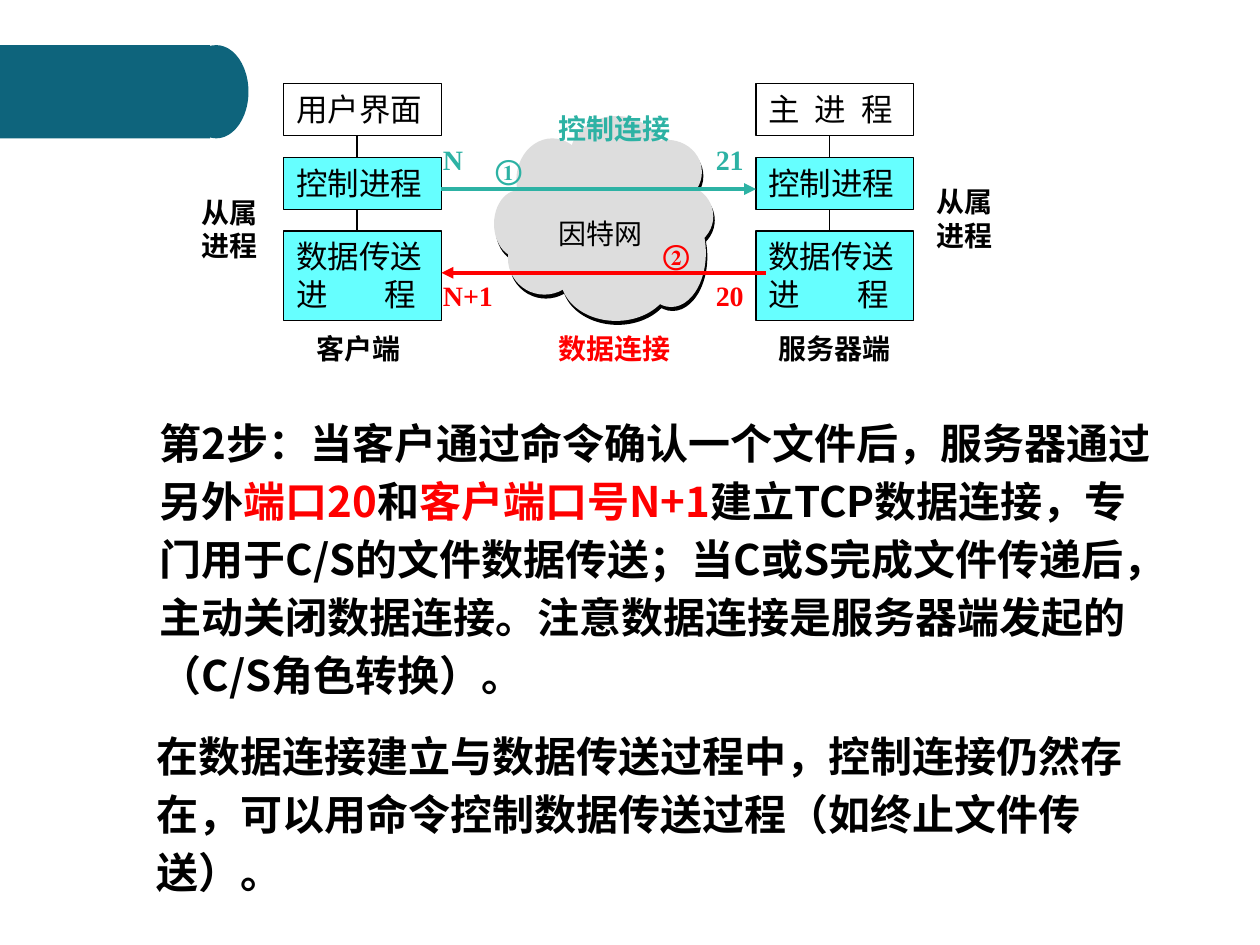
from typing import NamedTuple

from lxml import etree
from pptx import Presentation
from pptx.dml.color import RGBColor
from pptx.enum import shapes, text
from pptx.oxml import ns
from pptx.util import Cm, Pt

SERIF, SANS = "Times New Roman", "Noto Sans CJK SC"
BLACK, WHITE, RED, TEAL = "000000", "FFFFFF", "FF0000", "2DB2A4"
CYAN, GREY, BANNER = "66FFFF", "DDDDDD", "0E647C"
CLIENT_X, SERVER_X, BOX_WIDTH = 5.72, 15.24, 3.18
LABEL_HEIGHT = 0.94


class Frame(NamedTuple):
    """Left, top, width and height in centimetres."""
    left: float
    top: float
    width: float
    height: float


class Run(NamedTuple):
    text: str
    colour: str = BLACK


class Box(NamedTuple):
    frame: Frame
    text: str
    fill: str = CYAN
    tabs: tuple = ()


class Label(NamedTuple):
    text: str
    frame: Frame
    colour: str = BLACK
    bold: bool = True


class Line(NamedTuple):
    start: tuple
    end: tuple
    colour: str = BLACK
    width: float = 0.75
    arrow: str = ""


def rgb(colour: str) -> RGBColor:
    return RGBColor.from_string(colour)


def lengths(values) -> list:
    return [Cm(value) for value in values]


def add_preset(parent, kind, frame: Frame, fill: str, outline: str = ""):
    shape = parent.add_shape(kind, *lengths(frame))
    shape.shadow.inherit = False
    shape.fill.solid()
    shape.fill.fore_color.rgb = rgb(fill)
    if outline:
        shape.line.color.rgb = rgb(outline)
        shape.line.width = Pt(0.75)
    else:
        shape.line.fill.background()
    return shape


def add_tab_stops(paragraph, positions) -> None:
    properties = paragraph._p.get_or_add_pPr()
    tab_list = etree.SubElement(properties, ns.qn("a:tabLst"))
    for position in positions:
        etree.SubElement(tab_list, ns.qn("a:tab"), pos=str(Cm(position)), algn="l")


def write_runs(paragraph, runs, size: float, name: str, bold: bool) -> None:
    paragraph.alignment = text.PP_ALIGN.LEFT
    for item in runs:
        run = paragraph.add_run()
        run.text = item.text
        for key, value in {"size": Pt(size), "bold": bold, "name": name}.items():
            setattr(run.font, key, value)
        run.font.color.rgb = rgb(item.colour)
        if name == SANS:
            etree.SubElement(run._r.rPr, ns.qn("a:ea"), typeface=name)


def add_text(slide, frame: Frame, runs, size=16, name=SERIF, bold=True):
    shape = slide.shapes.add_textbox(*lengths(frame))
    shape.text_frame.word_wrap = True
    write_runs(shape.text_frame.paragraphs[0], runs, size, name, bold)
    return shape


def add_body(slide, frame: Frame, runs) -> None:
    text_frame = add_text(slide, frame, runs, 24, SANS).text_frame
    text_frame.vertical_anchor = text.MSO_ANCHOR.MIDDLE
    text_frame.paragraphs[0].line_spacing = 1.15


def add_box(slide, box: Box) -> None:
    shape = add_preset(slide.shapes, shapes.MSO_SHAPE.RECTANGLE, box.frame, box.fill, BLACK)
    shape.text_frame.word_wrap = True
    shape.text_frame.vertical_anchor = text.MSO_ANCHOR.TOP
    paragraph = shape.text_frame.paragraphs[0]
    if box.tabs:
        add_tab_stops(paragraph, box.tabs)
    write_runs(paragraph, [Run(box.text)], 18, SERIF, False)


def add_line(slide, line: Line) -> None:
    connector = slide.shapes.add_connector(
        shapes.MSO_CONNECTOR.STRAIGHT, *lengths(line.start + line.end))
    connector.line.color.rgb = rgb(line.colour)
    connector.line.width = Pt(line.width)
    if line.arrow:
        etree.SubElement(connector.line._get_or_add_ln(), ns.qn(line.arrow), type="triangle")
    etree.SubElement(connector._element.spPr, ns.qn("a:effectLst"))


def add_cloud(slide, puffs) -> None:
    """Draw the puffs twice: a dark offset layer under a grey one."""
    group = slide.shapes.add_group_shape()
    for fill, dx, dy in ((BLACK, 0.03, 0.08), (GREY, 0, 0)):
        for puff in puffs:
            frame = puff._replace(left=puff.left + dx, top=puff.top + dy)
            add_preset(group.shapes, shapes.MSO_SHAPE.OVAL, frame, fill)


def add_banner(slide) -> None:
    group = slide.shapes.add_group_shape()
    add_preset(group.shapes, shapes.MSO_SHAPE.RECTANGLE, Frame(0, 0.91, 4.24, 1.88), BANNER)
    add_preset(group.shapes, shapes.MSO_SHAPE.OVAL, Frame(3.71, 0.91, 1.3, 1.88), BANNER)


def process_boxes(left: float, top_text: str, top_tabs: tuple = ()) -> list:
    return [
        Box(Frame(left, 1.69, BOX_WIDTH, 1.04), top_text, WHITE, top_tabs),
        Box(Frame(left, 3.18, BOX_WIDTH, 1.04), "控制进程"),
        Box(Frame(left, 4.66, BOX_WIDTH, 1.8), "数据传送进\t程", CYAN, (1.79,)),
    ]


PUFFS = [
    Frame(11.48, 2.34, 1.9, 1.68), Frame(10.41, 2.79, 1.45, 1.68),
    Frame(9.96, 3.84, 0.97, 1.35), Frame(10.24, 4.47, 1.47, 1.47),
    Frame(11.3, 4.72, 2.24, 1.75), Frame(12.75, 2.82, 1.4, 1.3),
    Frame(12.98, 3.71, 1.4, 1.3), Frame(12.83, 4.01, 1.4, 2.18),
    Frame(10.74, 3.33, 2.87, 2.18),
]
BOXES = (process_boxes(CLIENT_X, "用户界面")
         + process_boxes(SERVER_X, "主\t进\t程", (0.94, 1.87)))
LINES = [
    Line((x + 1.48, top), (x + 1.48, bottom))
    for x in (CLIENT_X, SERVER_X) for top, bottom in ((2.74, 3.18), (4.23, 4.66))
] + [
    Line((CLIENT_X + BOX_WIDTH, 3.81), (SERVER_X, 3.81), TEAL, 2.25, "a:tailEnd"),
    Line((CLIENT_X + BOX_WIDTH, 5.5), (15.45, 5.5), RED, 2.25, "a:headEnd"),
]
LABELS = [
    Label("因特网", Frame(11.01, 4.24, 2.34, LABEL_HEIGHT), bold=False),
    Label("客户端", Frame(6.14, 6.56, 2.54, LABEL_HEIGHT)),
    Label("服务器端", Frame(15.45, 6.56, 2.96, LABEL_HEIGHT)),
    Label("从属进程", Frame(3.81, 3.81, 1.69, 1.62)),
    Label("从属进程", Frame(18.63, 3.6, 1.69, 1.62)),
    Label("控制连接", Frame(11.01, 2.12, 2.96, LABEL_HEIGHT), TEAL),
    Label("数据连接", Frame(11.01, 6.56, 2.96, LABEL_HEIGHT), RED),
    Label("①", Frame(9.74, 2.96, 1.06, LABEL_HEIGHT), TEAL),
    Label("②", Frame(13.12, 4.66, 1.06, LABEL_HEIGHT), RED),
    Label("N", Frame(8.68, 2.75, 1.27, LABEL_HEIGHT), TEAL),
    Label("21", Frame(14.18, 2.75, 1.27, LABEL_HEIGHT), TEAL),
    Label("N+1", Frame(8.68, 5.5, 1.91, LABEL_HEIGHT), RED),
    Label("20", Frame(14.18, 5.5, 1.27, LABEL_HEIGHT), RED),
]
STEP = [
    Run("第2步：当客户通过命令确认一个文件后，服务器通过另外"),
    Run("端口20", RED),
    Run("和"),
    Run("客户端口号N+1", RED),
    Run("建立TCP数据连接，专门用于C/S的文件数据传送；当C或S完成文件传递后，"
        "主动关闭数据连接。注意数据连接是服务器端发起的（C/S角色转换）。"),
]
REMARK = [Run("在数据连接建立与数据传送过程中，控制连接仍然存在，"
              "可以用命令控制数据传送过程（如终止文件传送）。")]


def main() -> None:
    presentation = Presentation()
    presentation.slide_width, presentation.slide_height = Cm(25.4), Cm(19.05)
    slide = presentation.slides.add_slide(presentation.slide_layouts[6])
    add_banner(slide)
    add_cloud(slide, PUFFS)
    for box in BOXES:
        add_box(slide, box)
    for line in LINES:
        add_line(slide, line)
    for label in LABELS:
        add_text(slide, label.frame, [Run(label.text, label.colour)], bold=label.bold)
    add_body(slide, Frame(2.97, 8.26, 20.55, 5.87), STEP)
    add_body(slide, Frame(2.9, 14.53, 20.32, 3.61), REMARK)
    presentation.save("out.pptx")


if __name__ == "__main__":
    main()
